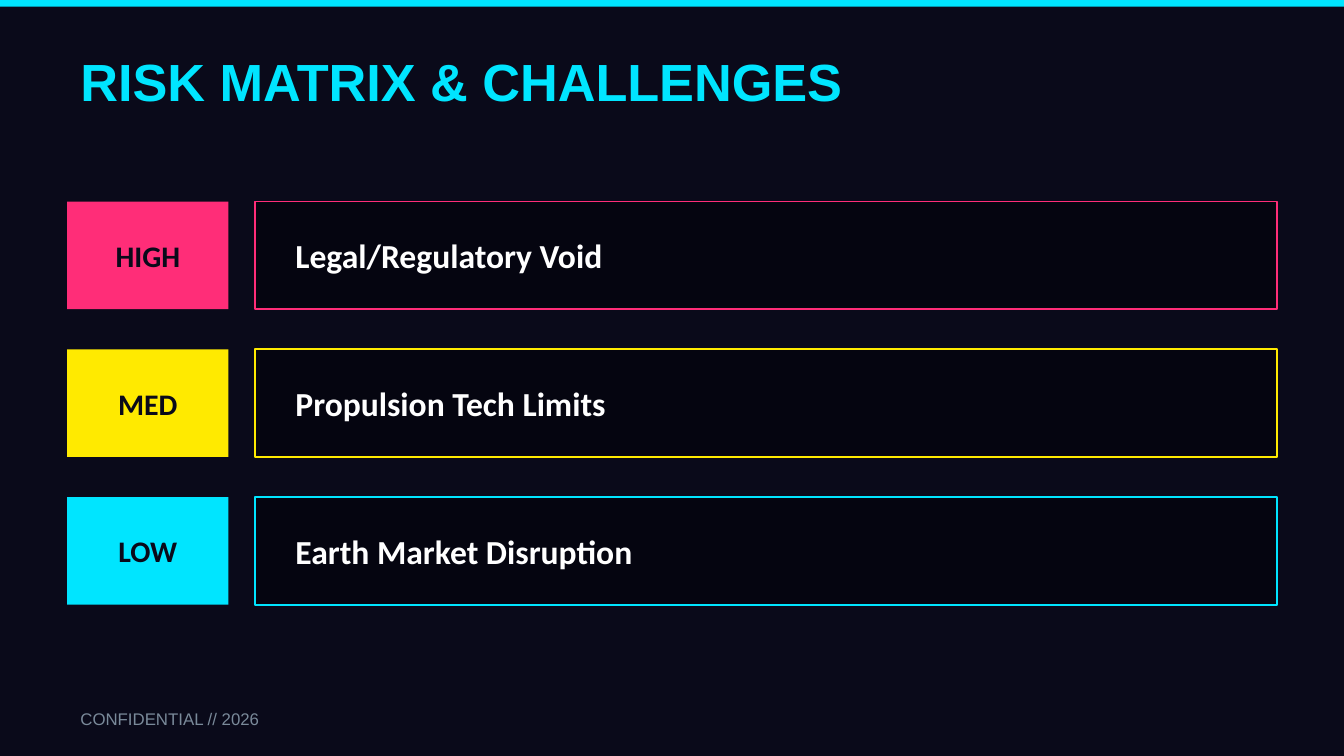
"""Build the risk matrix slide: three rated challenges on a dark ground."""
import dataclasses

import pptx
import pptx.dml.color
import pptx.enum.shapes
import pptx.enum.text
import pptx.util


@dataclasses.dataclass(frozen=True)
class Theme:
    ground: str = "0A0A1A"
    panel: str = "050510"
    cyan: str = "00E5FF"
    pink: str = "FF2D78"
    yellow: str = "FFEA00"
    white: str = "FFFFFF"
    grey: str = "7A8A9A"
    head: str = "Arial"
    body: str = "Calibri"
    title: int = 28
    label: int = 18
    badge: int = 16
    footer: int = 9


PX = 11430
theme = Theme()
rgb = pptx.dml.color.RGBColor.from_string
align = pptx.enum.text.PP_ALIGN


def add_box(area, fill, line=None):
    box = slide.shapes.add_shape(
        pptx.enum.shapes.MSO_SHAPE.RECTANGLE, *(n * PX for n in area))
    box.shadow.inherit = False
    box.fill.solid()
    box.fill.fore_color.rgb = rgb(fill)
    if line:
        box.line.color.rgb = rgb(line)
        box.line.width = pptx.util.Pt(1)
    else:
        box.line.fill.background()


def add_text(area, text, face, size, color, bold=True, side=align.LEFT):
    frame = slide.shapes.add_textbox(*(n * PX for n in area)).text_frame
    frame.word_wrap = True
    frame.vertical_anchor = pptx.enum.text.MSO_ANCHOR.MIDDLE
    para = frame.paragraphs[0]
    para.text = text
    para.alignment = side
    para.font.name = face
    para.font.size = pptx.util.Pt(size)
    para.font.bold = bold
    para.font.color.rgb = rgb(color)


deck = pptx.Presentation()
deck.slide_width = 800 * PX
deck.slide_height = 450 * PX
slide = deck.slides.add_slide(deck.slide_layouts[6])
slide.background.fill.solid()
slide.background.fill.fore_color.rgb = rgb(theme.ground)

add_box((0, 0, 800, 4), theme.cyan)
add_text((40, 24, 720, 48), "RISK MATRIX & CHALLENGES",
         theme.head, theme.title, theme.cyan)

risks = [
    ("HIGH", "Legal/Regulatory Void", theme.pink),
    ("MED", "Propulsion Tech Limits", theme.yellow),
    ("LOW", "Earth Market Disruption", theme.cyan),
]
for row, (level, risk, color) in enumerate(risks):
    top = 120 + 88 * row
    badge = (40, top, 96, 64)
    add_box(badge, color)
    add_text(badge, level, theme.body, theme.badge, theme.ground,
             side=align.CENTER)
    add_box((152, top, 608, 64), theme.panel, color)
    add_text((168, top, 576, 64), risk, theme.body, theme.label, theme.white)

add_text((40, 416, 400, 24), "CONFIDENTIAL // 2026",
         theme.head, theme.footer, theme.grey, bold=False)

deck.save("out.pptx")
